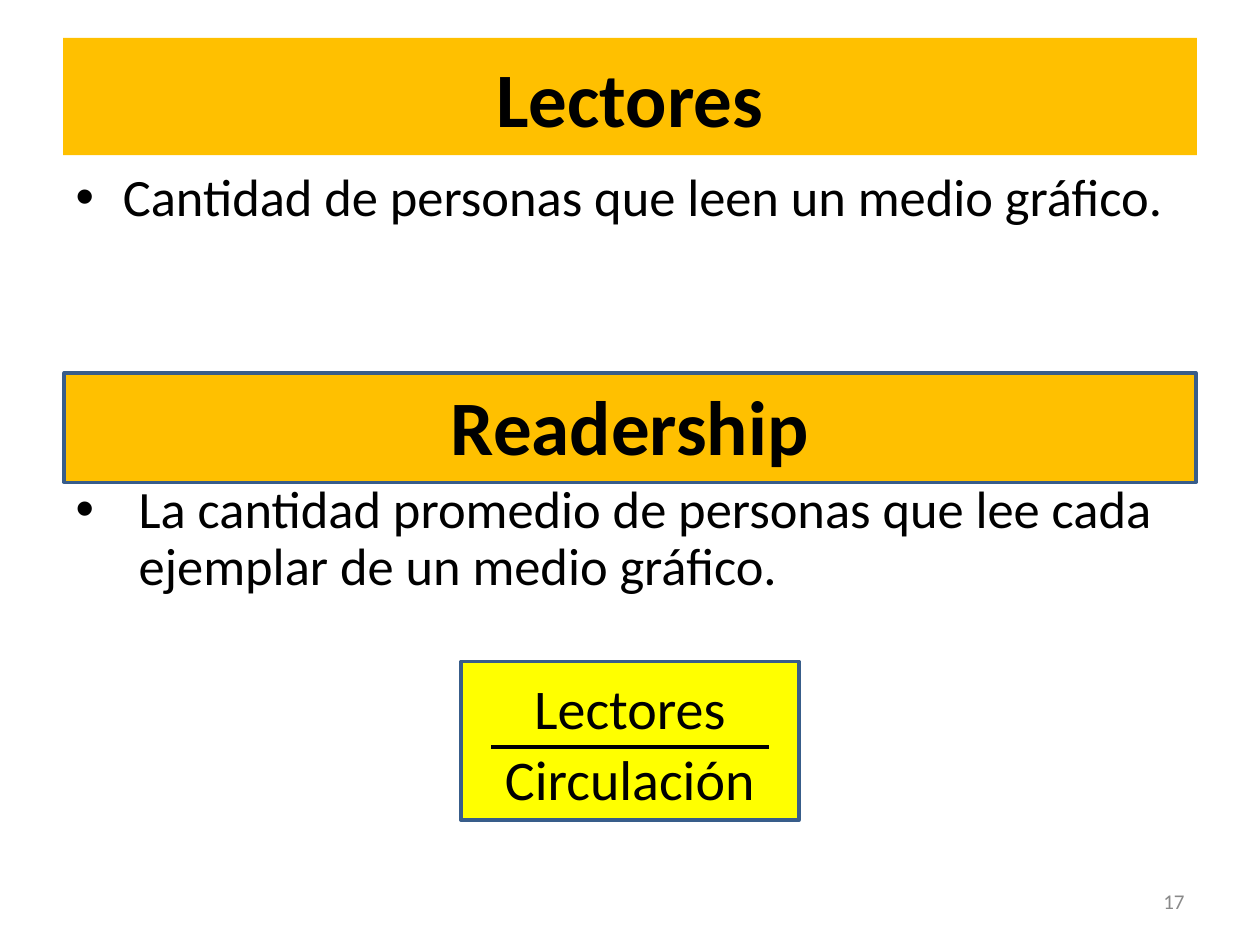
from lxml.etree import SubElement
from pptx import Presentation
from pptx.dml.color import RGBColor
from pptx.enum.shapes import MSO_CONNECTOR, MSO_SHAPE
from pptx.enum.text import MSO_ANCHOR, MSO_AUTO_SIZE, PP_ALIGN
from pptx.oxml.ns import qn
from pptx.util import Pt

AMBER, YELLOW, NAVY, BLACK, GREY = "FFC000", "FFFF00", "385D8A", "000000", "898989"


def colour(value):
    return RGBColor.from_string(value)


def place(shape, box):
    shape.left, shape.top, shape.width, shape.height = (Pt(n) for n in box)


def write(para, text, size=32, color=BLACK, bold=False, align=PP_ALIGN.LEFT,
          before=0, spacing=None, indent=None, bullet=False):
    """Fill a paragraph; indent is the hanging indent in points."""
    para.alignment = align
    para.space_before = Pt(before)
    if spacing:
        para.line_spacing = spacing
    properties = para._p.get_or_add_pPr()
    if indent is not None:
        properties.set("marL", str(Pt(indent)))
        properties.set("indent", str(Pt(-indent)))
    if bullet:
        SubElement(properties, qn("a:buFont"), typeface="Arial")
        SubElement(properties, qn("a:buChar"), char="•")
    else:
        SubElement(properties, qn("a:buNone"))
    span = para.add_run()
    span.text = text
    span.font.name = "Calibri"
    span.font.size = Pt(size)
    span.font.bold = bold
    span.font.color.rgb = colour(color)


def add_panel(page, box, fill):
    """Outlined rectangle behind the placeholders."""
    panel = page.shapes.add_shape(MSO_SHAPE.RECTANGLE, *(Pt(n) for n in box))
    panel.shadow.inherit = False
    panel.fill.solid()
    panel.fill.fore_color.rgb = colour(fill)
    panel.line.color.rgb = colour(NAVY)
    panel.line.width = Pt(2)
    page.shapes.title.element.addprevious(panel.element)


def add_title(page, box, text):
    title = page.shapes.title
    place(title, box)
    title.fill.solid()
    title.fill.fore_color.rgb = colour(AMBER)
    frame = title.text_frame
    frame.auto_size = MSO_AUTO_SIZE.NONE
    frame.vertical_anchor = MSO_ANCHOR.MIDDLE
    write(frame.paragraphs[0], text, size=44, bold=True, align=PP_ALIGN.CENTER)


def add_body(page, box):
    body = page.placeholders[1]
    place(body, box)
    frame = body.text_frame
    frame.auto_size = MSO_AUTO_SIZE.NONE
    centred = dict(align=PP_ALIGN.CENTER, indent=27)
    lines = [
        ("Cantidad de personas que leen un medio gráfico.",
         dict(size=30, indent=27, bullet=True)),
        ("Readership", dict(size=44, bold=True, before=92, **centred)),
        ("La cantidad promedio de personas que lee cada ejemplar de un medio gráfico.",
         dict(size=30, indent=36, bullet=True, before=6.4)),
        ("Lectores", dict(before=48, **centred)),
        ("Circulación", dict(before=6.4, **centred)),
    ]
    for index, (text, style) in enumerate(lines):
        para = frame.add_paragraph() if index else frame.paragraphs[0]
        write(para, text, spacing=0.9, **style)


def add_fraction_bar(page, left, right, y):
    bar = page.shapes.add_connector(MSO_CONNECTOR.STRAIGHT, Pt(left), Pt(y), Pt(right), Pt(y))
    bar.line.color.rgb = colour(BLACK)
    bar.line.width = Pt(2.25)
    SubElement(bar.element.spPr, qn("a:effectLst"))


def add_page_number(page, box, number):
    frame = page.shapes.add_textbox(*(Pt(n) for n in box)).text_frame
    frame.word_wrap = True
    frame.vertical_anchor = MSO_ANCHOR.MIDDLE
    write(frame.paragraphs[0], number, size=12, color=GREY, align=PP_ALIGN.RIGHT)


def main():
    deck = Presentation()
    deck.slide_width, deck.slide_height = Pt(720), Pt(540)
    page = deck.slides.add_slide(deck.slide_layouts[1])
    add_panel(page, (36.7, 213.1, 646.6, 62.6), AMBER)
    add_panel(page, (263.5, 378, 193, 90.7), YELLOW)
    add_title(page, (36, 21.6, 648, 67), "Lectores")
    add_body(page, (36, 94.3, 648, 391))
    add_fraction_bar(page, 280.8, 439.2, 427)
    add_page_number(page, (516, 500.5, 168, 28.8), "17")
    deck.save("out.pptx")


if __name__ == "__main__":
    main()
